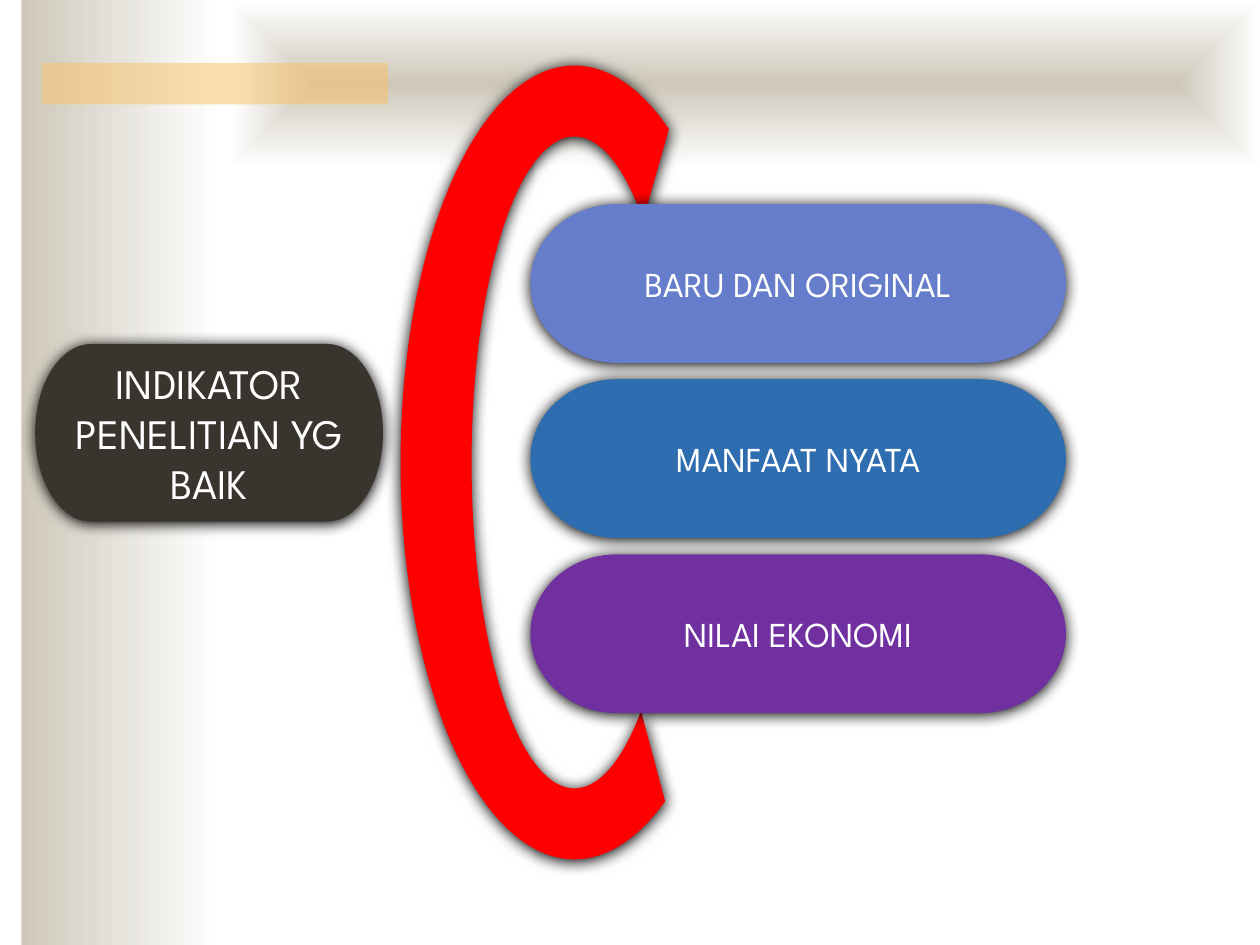
"""Build a slide listing three indicators of good research."""
from lxml import etree
from pptx import Presentation
from pptx import util as u
from pptx.dml.color import RGBColor
from pptx.enum import shapes, text
from pptx.oxml.ns import qn

WHITE = RGBColor(0xFF, 0xFF, 0xFF)
SAND = RGBColor(0xCE, 0xC8, 0xBA)
AMBER = RGBColor(0xFA, 0xC1, 0x64)
RED = RGBColor(0xFF, 0x00, 0x00)
CHARCOAL = RGBColor(0x39, 0x34, 0x2E)
PERIWINKLE = RGBColor(0x65, 0x7D, 0xCA)
BLUE = RGBColor(0x2E, 0x6E, 0xB0)
PURPLE = RGBColor(0x70, 0x30, 0xA0)

FONT = "League Spartan"
TITLE = "INDIKATOR PENELITIAN YG BAIK"
INDICATORS = [
    ("BARU DAN ORIGINAL", PERIWINKLE),
    ("MANFAAT NYATA", BLUE),
    ("NILAI EKONOMI", PURPLE),
]

WIDTH, HEIGHT = 10, 7.5
SIDE_BAND = (0.17, 0, 1.58, HEIGHT)
TOP_BAND = (1.83, 0, WIDTH - 1.83, 1.33)
ACCENT_BAR = (0.33, 0.5, 2.75, 0.33)
ARC = (1.41, 2.29, 6.3, 2.76)
ARC_ADJUSTMENTS = (99.015, 9.489, 0.204)
TITLE_PILL = (0.28, 2.73, 2.76, 1.41)
PILL_LEFT, PILL_TOP, PILL_WIDTH, PILL_HEIGHT = 4.21, 1.62, 4.25, 1.26
PILL_PITCH = 1.39


def add_shape(slide, kind, box, color=None):
    shape = slide.shapes.add_shape(kind, *(u.Inches(length) for length in box))
    shape.line.fill.background()
    shape.shadow.inherit = False
    if color is not None:
        shape.fill.solid()
        shape.fill.fore_color.rgb = color
    return shape


def add_gradient_band(slide, box, centered):
    shape = add_shape(slide, shapes.MSO_SHAPE.RECTANGLE, box)
    shape.fill.gradient()
    for stop, color in zip(shape.fill.gradient_stops, (SAND, WHITE)):
        stop.color.rgb = color
    direction = next(shape.element.spPr.iter(qn("a:lin")))
    if centered:
        gradient = direction.getparent()
        gradient.remove(direction)
        shade = etree.SubElement(gradient, qn("a:path"), path="shape")
        edges = dict.fromkeys("ltrb", "50000")
        etree.SubElement(shade, qn("a:fillToRect"), edges)
    else:
        direction.set("ang", "0")


def add_shadow(shape):
    effects = shape.element.spPr.find(qn("a:effectLst"))
    shadow = etree.SubElement(
        effects, qn("a:outerShdw"), blurRad=str(u.Pt(8.5)), dist=str(u.Pt(1)),
        dir="5400000", algn="ctr", rotWithShape="0")
    etree.SubElement(shadow, qn("a:srgbClr"), val="000000")


def add_pill(slide, box, color, label, size):
    shape = add_shape(slide, shapes.MSO_SHAPE.FLOWCHART_TERMINATOR, box, color)
    add_shadow(shape)
    frame = shape.text_frame
    frame.word_wrap = True
    frame.vertical_anchor = text.MSO_ANCHOR.MIDDLE
    paragraph = frame.paragraphs[0]
    paragraph.alignment = text.PP_ALIGN.CENTER
    run = paragraph.add_run()
    run.text = label
    run.font.name = FONT
    run.font.size = u.Pt(size)
    run.font.color.rgb = WHITE


def main():
    presentation = Presentation()
    presentation.slide_width = u.Inches(WIDTH)
    presentation.slide_height = u.Inches(HEIGHT)
    slide = presentation.slides.add_slide(presentation.slide_layouts[6])

    add_gradient_band(slide, SIDE_BAND, centered=False)
    add_gradient_band(slide, TOP_BAND, centered=True)
    bar = add_shape(slide, shapes.MSO_SHAPE.RECTANGLE, ACCENT_BAR, AMBER)
    bar_color = next(bar.element.spPr.iter(qn("a:srgbClr")))
    etree.SubElement(bar_color, qn("a:alpha"), val="50000")

    arc = add_shape(slide, shapes.MSO_SHAPE.BLOCK_ARC, ARC, RED)
    arc.rotation = 270
    for index, value in enumerate(ARC_ADJUSTMENTS):
        arc.adjustments[index] = value
    add_shadow(arc)

    add_pill(slide, TITLE_PILL, CHARCOAL, TITLE, 24)
    for row, (label, color) in enumerate(INDICATORS):
        box = (PILL_LEFT, PILL_TOP + row * PILL_PITCH, PILL_WIDTH, PILL_HEIGHT)
        add_pill(slide, box, color, label, 20)

    presentation.save("out.pptx")


if __name__ == "__main__":
    main()
